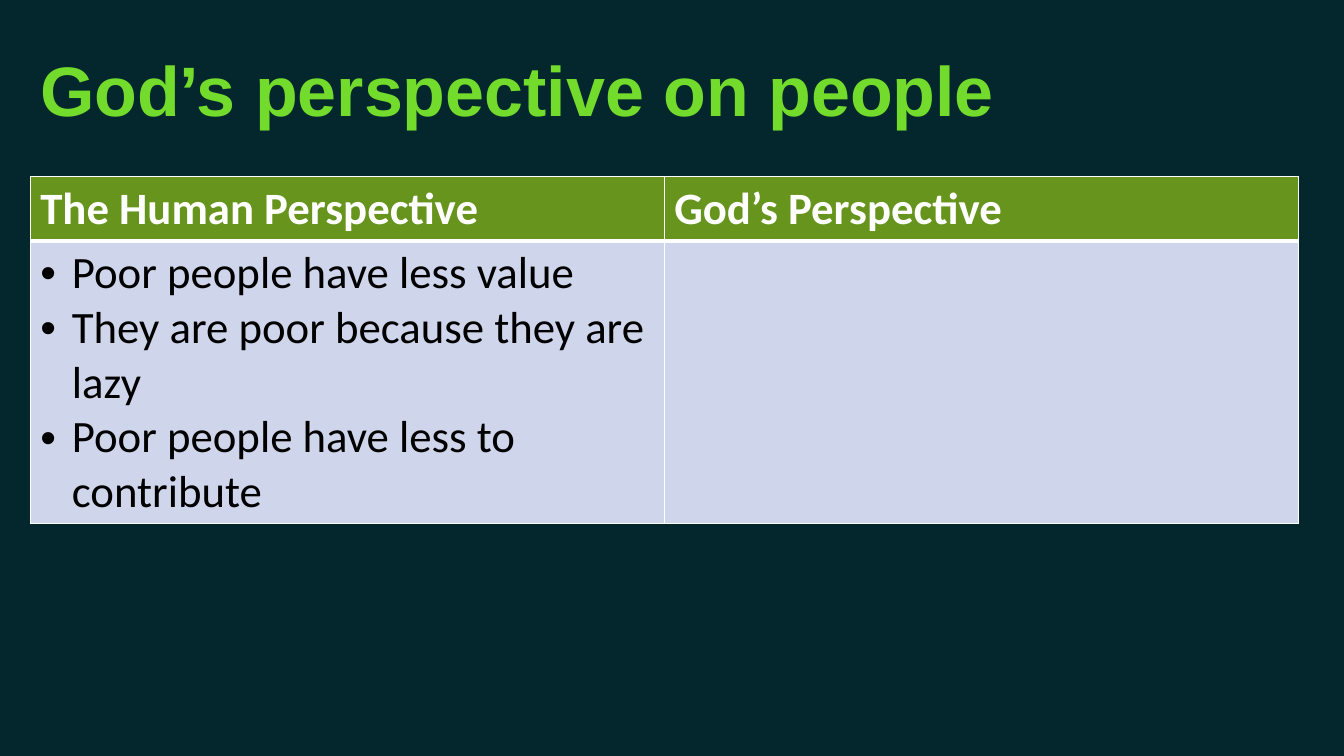
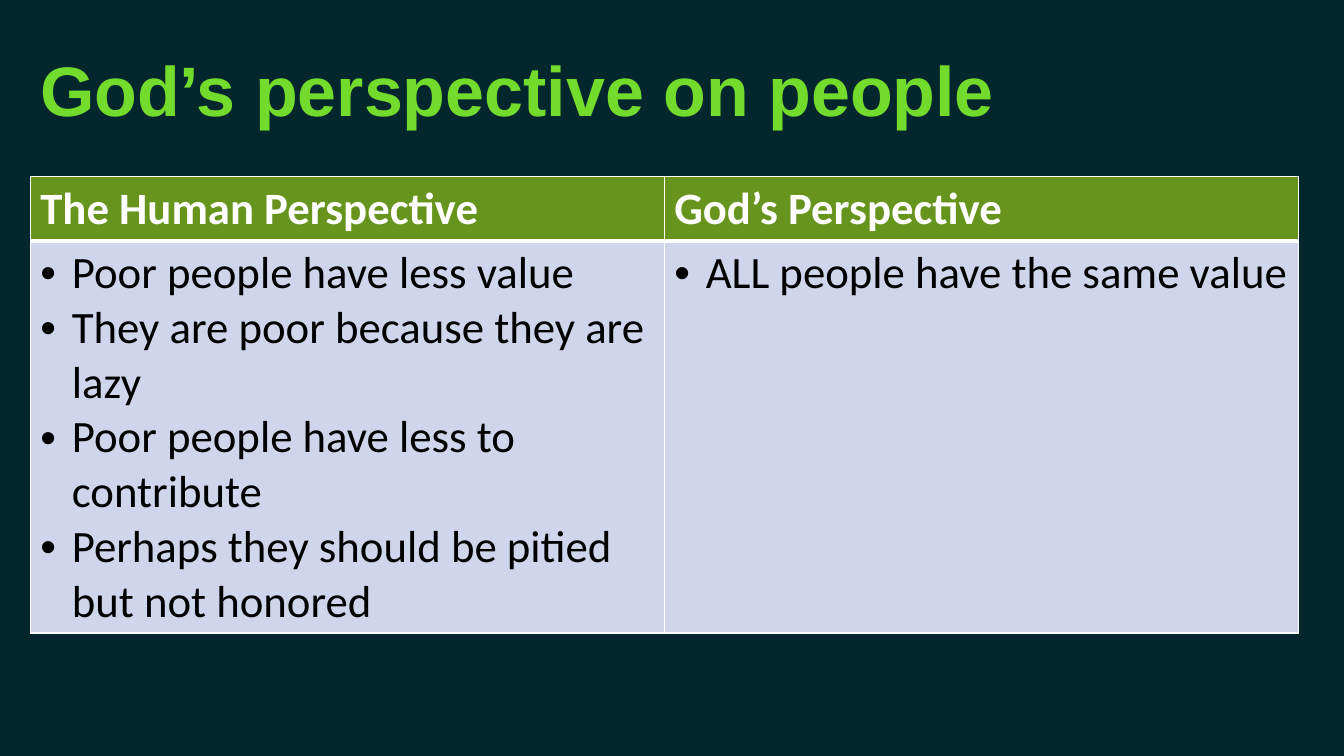
from dataclasses import dataclass

from lxml import etree
from pptx import Presentation
from pptx.dml.color import RGBColor
from pptx.enum.text import MSO_ANCHOR
from pptx.oxml.ns import qn
from pptx.util import Pt

MIDDLE = MSO_ANCHOR.MIDDLE


@dataclass(frozen=True)
class Theme:
    background: str = "03272D"
    title: str = "72DB2B"
    header_fill: str = "66941C"
    header_text: str = "FFFFFF"
    body_fill: str = "CFD5EA"
    body_text: str = "000000"
    rule: str = "FFFFFF"
    title_font: str = "Arial"
    table_font: str = "Calibri"
    title_size: int = 50
    table_size: int = 32
    bullet_indent: float = 22.5
    thin: int = 1
    thick: int = 3


THEME = Theme()

# Boxes in points: left, top, width, height
TITLE_BOX = (21.6, 10.8, 905.76, 104.4)
TABLE_LEFT, TABLE_TOP, TABLE_WIDTH = 21.6, 126, 905.76
HEADER_HEIGHT = 46
LINE_HEIGHT = 39
CELL_PADDING = 7.2

TITLE = "God’s perspective on people"
HEADINGS = ("The Human Perspective", "God’s Perspective")
HUMAN_VIEWS = (
    "Poor people have less value",
    "They are poor because they are lazy",
    "Poor people have less to contribute",
    "Perhaps they should be pitied but not honored",
)
GOD_VIEWS = ("ALL people have the same value",)

# Views of each side and the number of text lines in the taller column
STEPS = (
    ((HUMAN_VIEWS[:3], ()), 5),
    ((HUMAN_VIEWS, GOD_VIEWS), 7),
)


def style_font(font, name, size, color, bold):
    font.name = name
    font.size = Pt(size)
    font.bold = bold
    font.color.rgb = RGBColor.from_string(color)


def add_bullet(paragraph):
    props = paragraph._p.get_or_add_pPr()
    indent = Pt(THEME.bullet_indent)
    props.set("marL", str(indent))
    props.set("indent", str(-indent))
    etree.SubElement(props, qn("a:buFont"), typeface="Arial")
    etree.SubElement(props, qn("a:buChar"), char="•")


def set_borders(cell, bottom):
    props = cell._tc.get_or_add_tcPr()
    widths = {"L": THEME.thin, "R": THEME.thin, "T": THEME.thin, "B": bottom}
    for position, (side, width) in enumerate(widths.items()):
        line = etree.Element(qn(f"a:ln{side}"), w=str(Pt(width)))
        fill = etree.SubElement(line, qn("a:solidFill"))
        etree.SubElement(fill, qn("a:srgbClr"), val=THEME.rule)
        props.insert(position, line)


def fill_cell(cell, lines, fill, color, bold=False, bullets=False, bottom=THEME.thin):
    cell.fill.solid()
    cell.fill.fore_color.rgb = RGBColor.from_string(fill)
    set_borders(cell, bottom)
    cell.text_frame.text = "\n".join(lines)
    for paragraph in cell.text_frame.paragraphs:
        if bullets and paragraph.text:
            add_bullet(paragraph)
        style_font(paragraph.font, THEME.table_font, THEME.table_size, color, bold)
        for run in paragraph.runs:
            style_font(run.font, THEME.table_font, THEME.table_size, color, bold)


def add_title(slide, box):
    title = slide.shapes.add_textbox(*map(Pt, box))
    frame = title.text_frame
    frame.word_wrap = True
    frame.vertical_anchor = MIDDLE
    frame.text = TITLE
    style_font(frame.paragraphs[0].runs[0].font, THEME.title_font,
               THEME.title_size, THEME.title, True)


def add_comparison(slide, box, views):
    left, top, width, height = box
    table = slide.shapes.add_table(2, len(HEADINGS), *map(Pt, box)).table
    table.rows[0].height = Pt(HEADER_HEIGHT)
    table.rows[1].height = Pt(height - HEADER_HEIGHT)
    for index, (heading, points) in enumerate(zip(HEADINGS, views)):
        table.columns[index].width = Pt(width / len(HEADINGS))
        fill_cell(table.cell(0, index), [heading], THEME.header_fill,
                  THEME.header_text, bold=True, bottom=THEME.thick)
        fill_cell(table.cell(1, index), points, THEME.body_fill,
                  THEME.body_text, bullets=True)
        # The body's top rule is the header's thick bottom rule
        top_rule = table.cell(1, index)._tc.tcPr.find(qn("a:lnT"))
        top_rule.set("w", str(Pt(THEME.thick)))


def add_perspective_slide(deck, views, line_count):
    slide = deck.slides.add_slide(deck.slide_layouts[6])
    background = slide.background.fill
    background.solid()
    background.fore_color.rgb = RGBColor.from_string(THEME.background)
    add_title(slide, TITLE_BOX)
    height = HEADER_HEIGHT + line_count * LINE_HEIGHT + CELL_PADDING
    add_comparison(slide, (TABLE_LEFT, TABLE_TOP, TABLE_WIDTH, height), views)


def main():
    deck = Presentation()
    deck.slide_width, deck.slide_height = Pt(960), Pt(540)
    for views, line_count in STEPS:
        add_perspective_slide(deck, views, line_count)
    deck.save("out.pptx")


if __name__ == "__main__":
    main()
